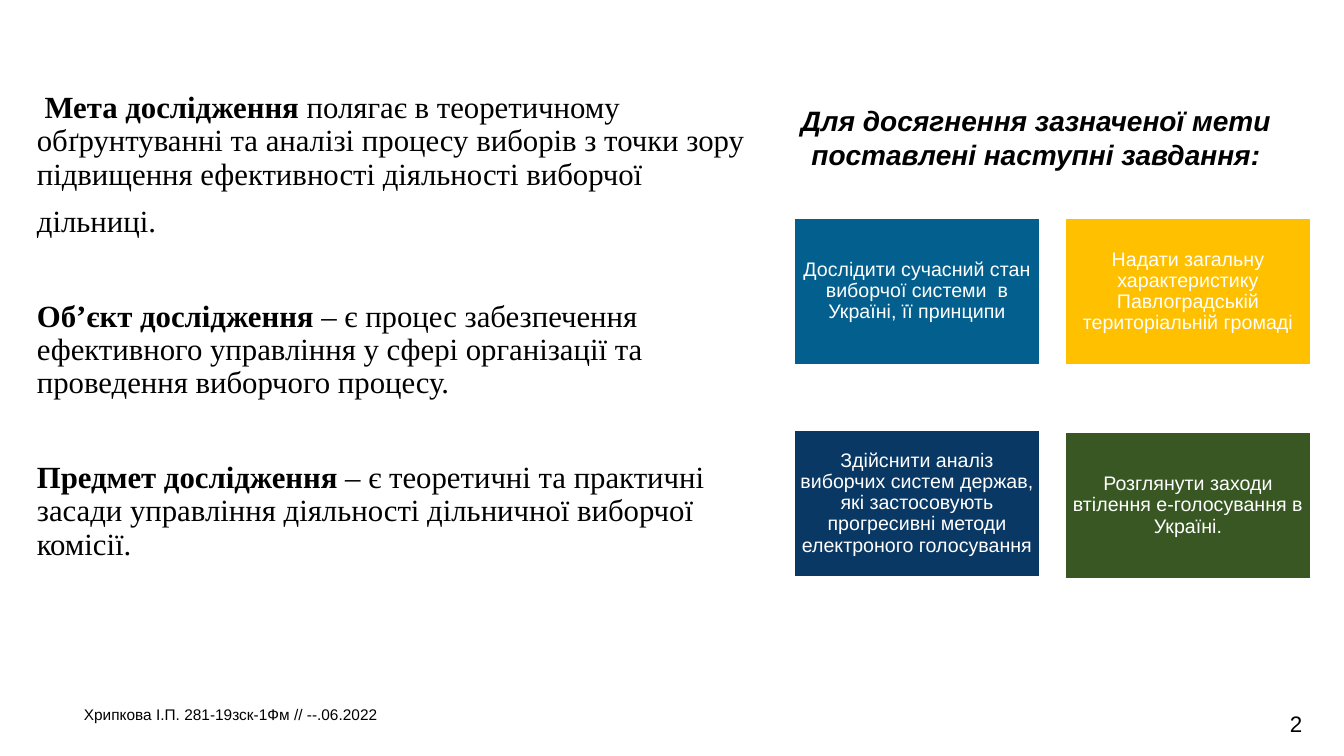
from pptx import Presentation
from pptx.dml.color import RGBColor
from pptx.enum.shapes import MSO_SHAPE
from pptx.enum.text import MSO_ANCHOR, PP_ALIGN
from pptx.util import Pt

COLORS = {"black": "000000", "white": "FFFFFF", "blue": "035F8E",
          "yellow": "FFC000", "navy": "093864", "green": "385723"}
SANS, SERIF = "Arial", "Times New Roman"

AIMS = [
    (0, "Мета дослідження ", "полягає в теоретичному обґрунтуванні та аналізі процесу виборів "
     "з точки зору підвищення ефективності діяльності виборчої"),
    (10, "", "дільниці."),
    (44, "Об’єкт дослідження ", "– є процес забезпечення ефективного управління у сфері "
     "організації та проведення виборчого процесу."),
    (44, "Предмет дослідження ", "– є теоретичні та практичні засади управління діяльності "
     "дільничної виборчої комісії."),
]
HEADING = "Для досягнення зазначеної мети поставлені наступні завдання:"
TASKS = [
    ("blue", 218, "Дослідити сучасний стан виборчої системи  в Україні, її принципи"),
    ("yellow", 218, "Надати загальну характеристику Павлоградській територіальній громаді"),
    ("navy", 430, "Здійснити аналіз виборчих систем держав, які застосовують "
     "прогресивні методи електроного голосування"),
    ("green", 432, "Розглянути заходи втілення е-голосування в Україні."),
]
FOOTER = "Хрипкова І.П. 281-19зск-1Фм // --.06.2022"
PAGE_NUMBER = "2"

EMU_PER_PX = 914400 / 100.8
TASK_LEFT, TASK_STEP, TASK_WIDTH, TASK_HEIGHT = 794, 271, 246, 147
TASK_INSET = 6


def px(value):
    return round(value * EMU_PER_PX)


def color(name):
    return RGBColor.from_string(COLORS[name])


def add_run(paragraph, text, size, font_name=SANS, color_name="black", bold=False, italic=False):
    run = paragraph.add_run()
    run.text = text
    run.font.size = Pt(size)
    run.font.name = font_name
    run.font.color.rgb = color(color_name)
    run.font.bold = bold
    run.font.italic = italic


def add_box(slide, *bounds):
    frame = slide.shapes.add_textbox(*map(px, bounds)).text_frame
    frame.word_wrap = True
    return frame


def add_aims(slide):
    frame = add_box(slide, 27, 87, 733, 550)
    for index, (space_before, term, text) in enumerate(AIMS):
        paragraph = frame.add_paragraph() if index else frame.paragraphs[0]
        paragraph.line_spacing = 0.9
        paragraph.space_before = Pt(space_before)
        if index == 0:
            add_run(paragraph, " ", 20)
        if term:
            add_run(paragraph, term, 22, SERIF, bold=True)
        add_run(paragraph, text, 22, SERIF)


def add_task(slide, index, fill, top, text):
    left = TASK_LEFT + index % 2 * TASK_STEP
    shape = slide.shapes.add_shape(
        MSO_SHAPE.RECTANGLE, px(left), px(top), px(TASK_WIDTH), px(TASK_HEIGHT))
    shape.shadow.inherit = False
    shape.fill.solid()
    shape.fill.fore_color.rgb = color(fill)
    shape.line.color.rgb = color("white")
    shape.line.width = Pt(1)
    frame = shape.text_frame
    frame.word_wrap = True
    frame.vertical_anchor = MSO_ANCHOR.MIDDLE
    frame.margin_left = frame.margin_right = px(TASK_INSET)
    frame.margin_top = frame.margin_bottom = px(TASK_INSET)
    paragraph = frame.paragraphs[0]
    paragraph.alignment = PP_ALIGN.CENTER
    paragraph.line_spacing = 0.9
    add_run(paragraph, text, 14, color_name="white")


def main():
    presentation = Presentation()
    presentation.slide_width, presentation.slide_height = px(1344), px(756)
    slide = presentation.slides.add_slide(presentation.slide_layouts[6])

    page_number = add_box(slide, 1264, 705, 64, 37).paragraphs[0]
    page_number.alignment = PP_ALIGN.CENTER
    add_run(page_number, PAGE_NUMBER, 16)

    add_aims(slide)

    footer = add_box(slide, 74, 702, 1098, 26).paragraphs[0]
    footer.line_spacing = 0.9
    add_run(footer, FOOTER, 11)

    for index, task in enumerate(TASKS):
        add_task(slide, index, *task)

    heading = add_box(slide, 777, 99, 518, 78).paragraphs[0]
    heading.alignment = PP_ALIGN.CENTER
    add_run(heading, HEADING, 20, bold=True, italic=True)

    presentation.save("out.pptx")


if __name__ == "__main__":
    main()
